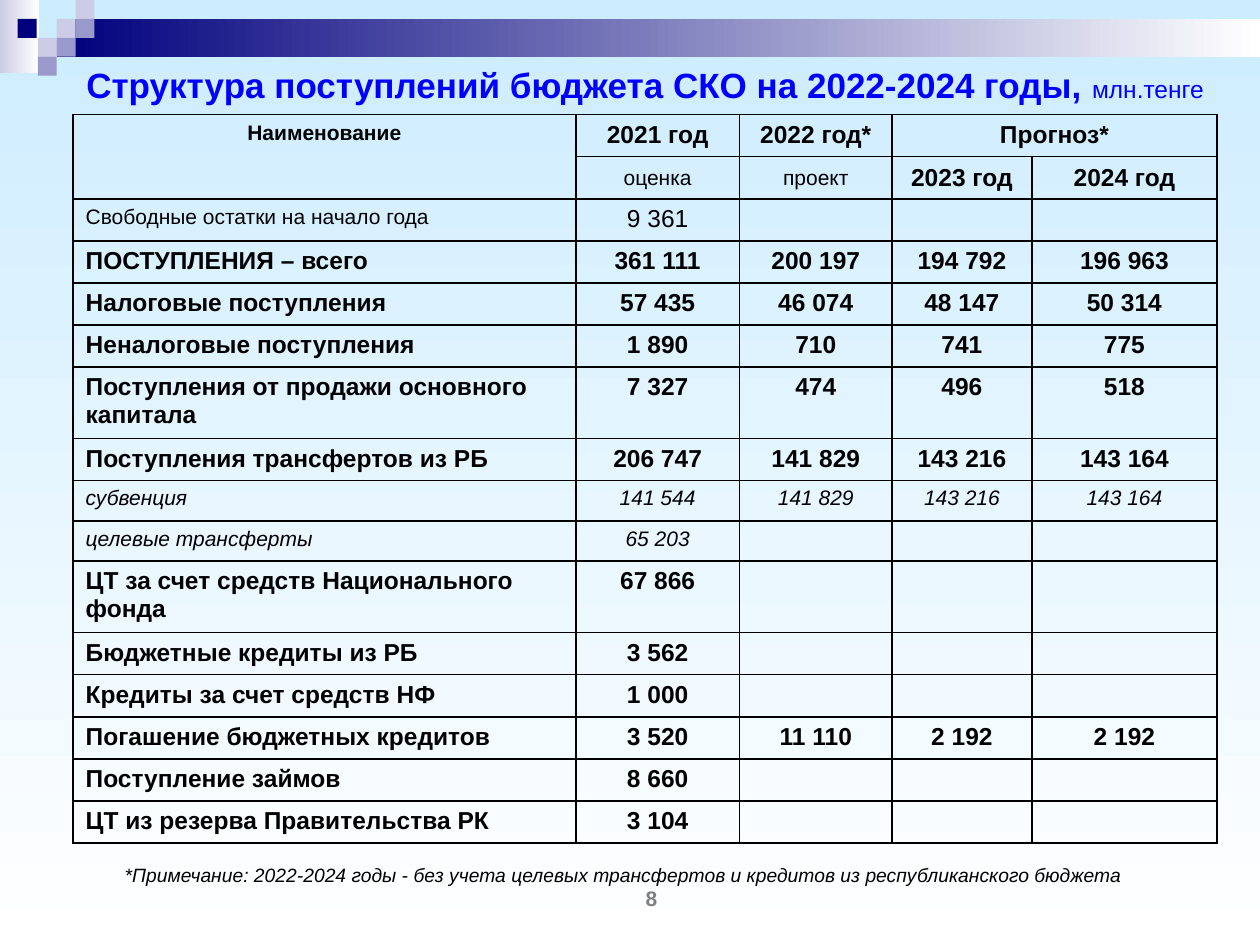
from lxml.etree import SubElement
from pptx import Presentation
from pptx.dml.color import RGBColor
from pptx.enum.shapes import MSO_SHAPE
from pptx.enum.text import MSO_ANCHOR, PP_ALIGN
from pptx.oxml import parse_xml
from pptx.oxml.ns import nsdecls, qn
from pptx.util import Inches, Pt

FONT = "Arial"
COLORS = {
    "sky": "CCECFF", "white": "FFFFFF", "navy": "00007D", "lilac": "CCCCE6",
    "violet": "9999CC", "blue": "0000FF", "black": "000000", "gray": "7F7F7F",
}

# Decoration: left, top, colour of each small square
SQUARE = 0.15
SQUARES = [
    (0.45, 0.15, "lilac"), (0.6, 0, "lilac"), (0.6, 0.15, "violet"),
    (0.3, 0.3, "lilac"), (0.14, 0.15, "navy"), (0.45, 0.3, "violet"),
    (0.3, 0.45, "violet"),
]

# Text styles: size, bold, italic
BOLD = (14, True, False)
PLAIN = (14, False, False)
SMALL = (12, False, False)
SMALL_BOLD = (12, True, False)
ITALIC = (12, False, True)

COLUMN_WIDTHS = [3.99, 1.3, 1.21, 1.11, 1.47]
ROW_HEIGHT = 0.32
TALL_ROW_HEIGHT = 0.53
TALL_ROWS = (6, 10)

# Rows: name style, value style, cell texts
ROWS = [
    (SMALL_BOLD, BOLD, ["Наименование", "2021 год", "2022 год*", "Прогноз*"]),
    (BOLD, BOLD, ["", "оценка", "проект", "2023 год", "2024 год"]),
    (SMALL, PLAIN, ["Свободные остатки на начало года", "9 361"]),
    (BOLD, BOLD, ["ПОСТУПЛЕНИЯ – всего", "361 111", "200 197", "194 792", "196 963"]),
    (BOLD, BOLD, ["Налоговые поступления", "57 435", "46 074", "48 147", "50 314"]),
    (BOLD, BOLD, ["Неналоговые поступления", "1 890", "710", "741", "775"]),
    (BOLD, BOLD, ["Поступления от продажи основного капитала", "7 327", "474", "496", "518"]),
    (BOLD, BOLD, ["Поступления трансфертов из РБ", "206 747", "141 829", "143 216", "143 164"]),
    (ITALIC, ITALIC, ["субвенция", "141 544", "141 829", "143 216", "143 164"]),
    (ITALIC, ITALIC, ["целевые трансферты", "65 203"]),
    (BOLD, BOLD, ["ЦТ за счет средств Национального фонда", "67 866"]),
    (BOLD, BOLD, ["Бюджетные кредиты из РБ", "3 562"]),
    (BOLD, BOLD, ["Кредиты за счет средств НФ", "1 000"]),
    (BOLD, BOLD, ["Погашение бюджетных кредитов", "3 520", "11 110", "2 192", "2 192"]),
    (BOLD, BOLD, ["Поступление займов", "8 660"]),
    (BOLD, BOLD, ["ЦТ из резерва Правительства РК", "3 104"]),
]


def color(name):
    return RGBColor.from_string(COLORS[name])


def fill_gradient(fill, start, end, angle=0):
    fill.gradient()
    fill.gradient_angle = angle
    for stop, name in zip(fill.gradient_stops, (start, end)):
        stop.color.rgb = color(name)


def add_rectangle(slide, left, top, width, height, *fill_colors):
    shape = slide.shapes.add_shape(
        MSO_SHAPE.RECTANGLE, Inches(left), Inches(top), Inches(width), Inches(height))
    shape.shadow.inherit = False
    shape.line.fill.background()
    if len(fill_colors) == 2:
        fill_gradient(shape.fill, *fill_colors)
    else:
        shape.fill.solid()
        shape.fill.fore_color.rgb = color(fill_colors[0])


def add_run(paragraph, text, style, color_name="black"):
    run = paragraph.add_run()
    run.text = text
    font = run.font
    font.name = FONT
    font.size, font.bold, font.italic = Pt(style[0]), style[1], style[2]
    font.color.rgb = color(color_name)


def add_text(slide, box, runs, alignment, anchor=MSO_ANCHOR.MIDDLE, side=0, top=0):
    shape = slide.shapes.add_textbox(*(Inches(value) for value in box))
    frame = shape.text_frame
    frame.word_wrap = True
    frame.vertical_anchor = anchor
    frame.margin_left = frame.margin_right = Inches(side)
    frame.margin_top, frame.margin_bottom = Inches(top), 0
    paragraph = frame.paragraphs[0]
    paragraph.alignment = alignment
    for run in runs:
        add_run(paragraph, *run)


def style_cell(cell):
    cell.fill.background()
    properties = cell._tc.get_or_add_tcPr()
    for index, side in enumerate(("lnL", "lnR", "lnT", "lnB")):
        properties.insert(index, parse_xml(
            f'<a:{side} {nsdecls("a")} w="12700"><a:solidFill>'
            f'<a:srgbClr val="{COLORS["black"]}"/></a:solidFill></a:{side}>'))


def fill_cell(cell, text, style, alignment):
    paragraph = cell.text_frame.paragraphs[0]
    paragraph.alignment = alignment
    if text:
        add_run(paragraph, text, style)
    else:
        # Keeps an empty cell from stretching its row
        SubElement(paragraph._p, qn("a:endParaRPr"), sz="1200")


def add_budget_table(slide):
    table = slide.shapes.add_table(
        len(ROWS), len(COLUMN_WIDTHS), Inches(0.58), Inches(0.91),
        Inches(sum(COLUMN_WIDTHS)), Inches(ROW_HEIGHT * len(ROWS))).table
    table.first_row = table.horz_banding = False
    for column, width in zip(table.columns, COLUMN_WIDTHS):
        column.width = Inches(width)
    for row_index, (name_style, value_style, texts) in enumerate(ROWS):
        tall = row_index in TALL_ROWS
        table.rows[row_index].height = Inches(TALL_ROW_HEIGHT if tall else ROW_HEIGHT)
        for column_index in range(len(COLUMN_WIDTHS)):
            cell = table.cell(row_index, column_index)
            style_cell(cell)
            text = texts[column_index] if column_index < len(texts) else ""
            style = value_style if column_index else name_style
            if text in ("оценка", "проект"):
                style = SMALL
            centered = column_index > 0 or row_index == 0
            fill_cell(cell, text, style, PP_ALIGN.CENTER if centered else PP_ALIGN.LEFT)
            if row_index == 1:
                cell.vertical_anchor = MSO_ANCHOR.MIDDLE
    table.rows[1].height = Inches(0.33)
    # Header cells that span rows or columns
    table.cell(0, 0).merge(table.cell(1, 0))
    table.cell(0, 3).merge(table.cell(0, 4))


def main():
    presentation = Presentation()
    presentation.slide_width, presentation.slide_height = Inches(10), Inches(7.5)
    slide = presentation.slides.add_slide(presentation.slide_layouts[6])
    fill_gradient(slide.background.fill, "sky", "white", 270)

    # Top decoration
    add_rectangle(slide, 0, 0, 0.31, 0.58, "lilac", "white")
    add_rectangle(slide, 0.6 - SQUARE, 0.15, 9.55, 0.3, "navy", "white")
    for left, top, name in SQUARES:
        add_rectangle(slide, left, top, SQUARE, SQUARE, name)

    # Title
    add_text(slide, (0.58, 0.33, 9.08, 0.58), [
        ("Структура поступлений бюджета СКО на 2022-2024 годы, ", (20, True, False), "blue"),
        ("млн.тенге", PLAIN, "blue"),
    ], PP_ALIGN.CENTER, side=0.05, top=0.1)

    add_budget_table(slide)

    # Footnote and slide number
    add_text(slide, (0.99, 6.85, 8.34, 0.18), [
        ("*Примечание: 2022-2024 годы - без учета целевых трансфертов и кредитов "
         "из республиканского бюджета", (11, False, True)),
    ], PP_ALIGN.LEFT, MSO_ANCHOR.TOP)
    add_text(slide, (4.17, 7.01, 2, 0.24), [("8", SMALL_BOLD, "gray")], PP_ALIGN.CENTER)

    presentation.save("out.pptx")


if __name__ == "__main__":
    main()
